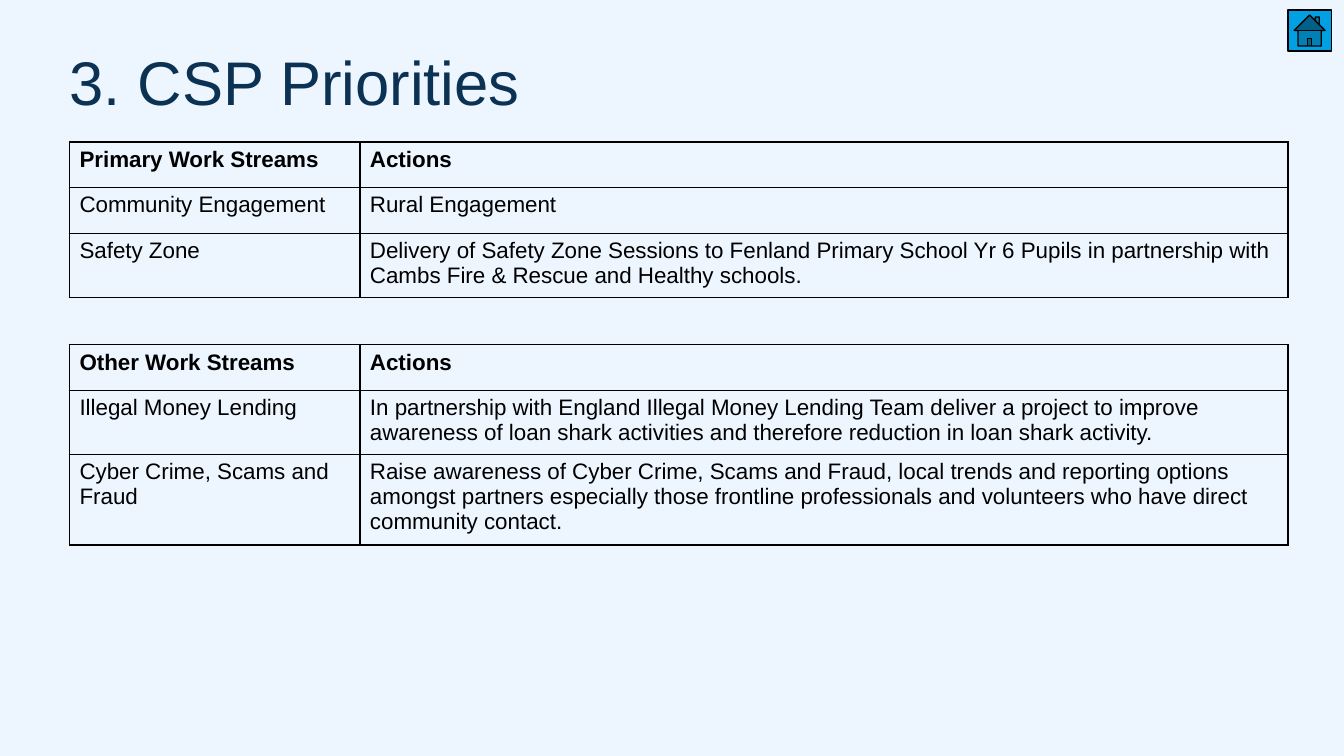
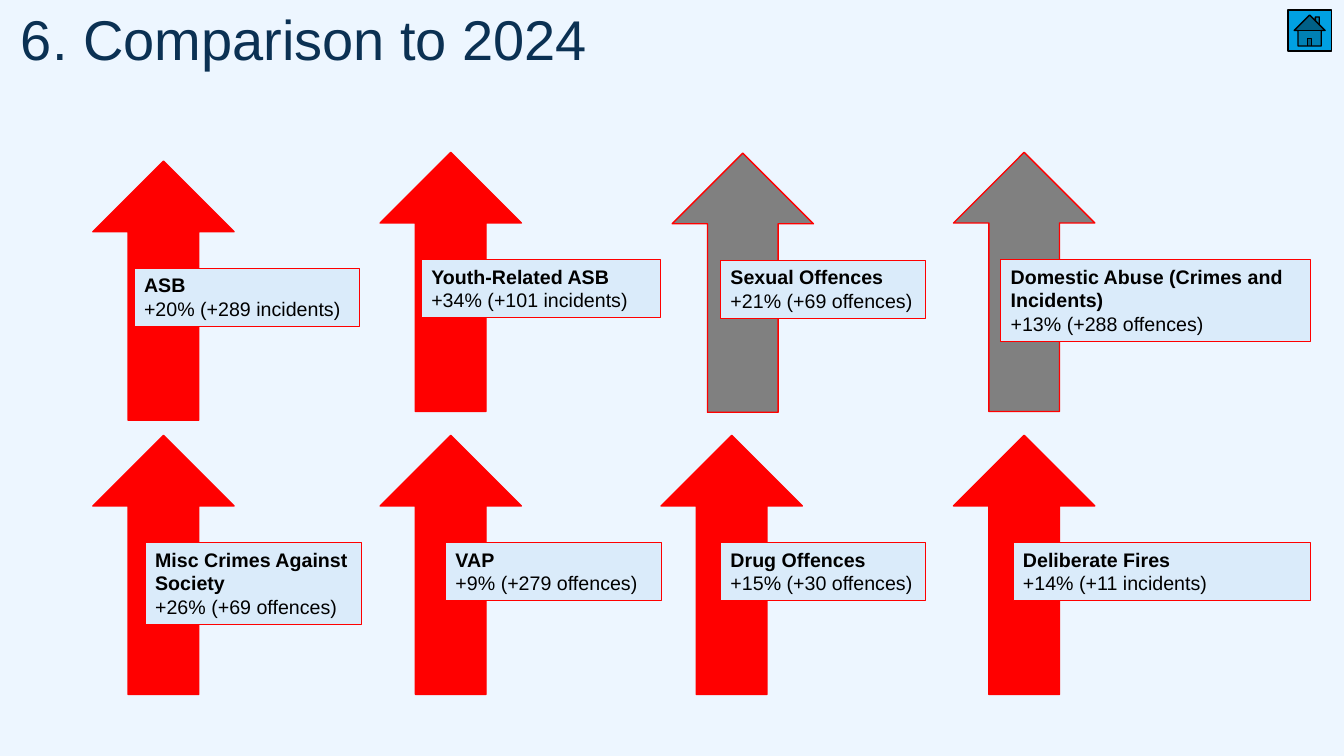
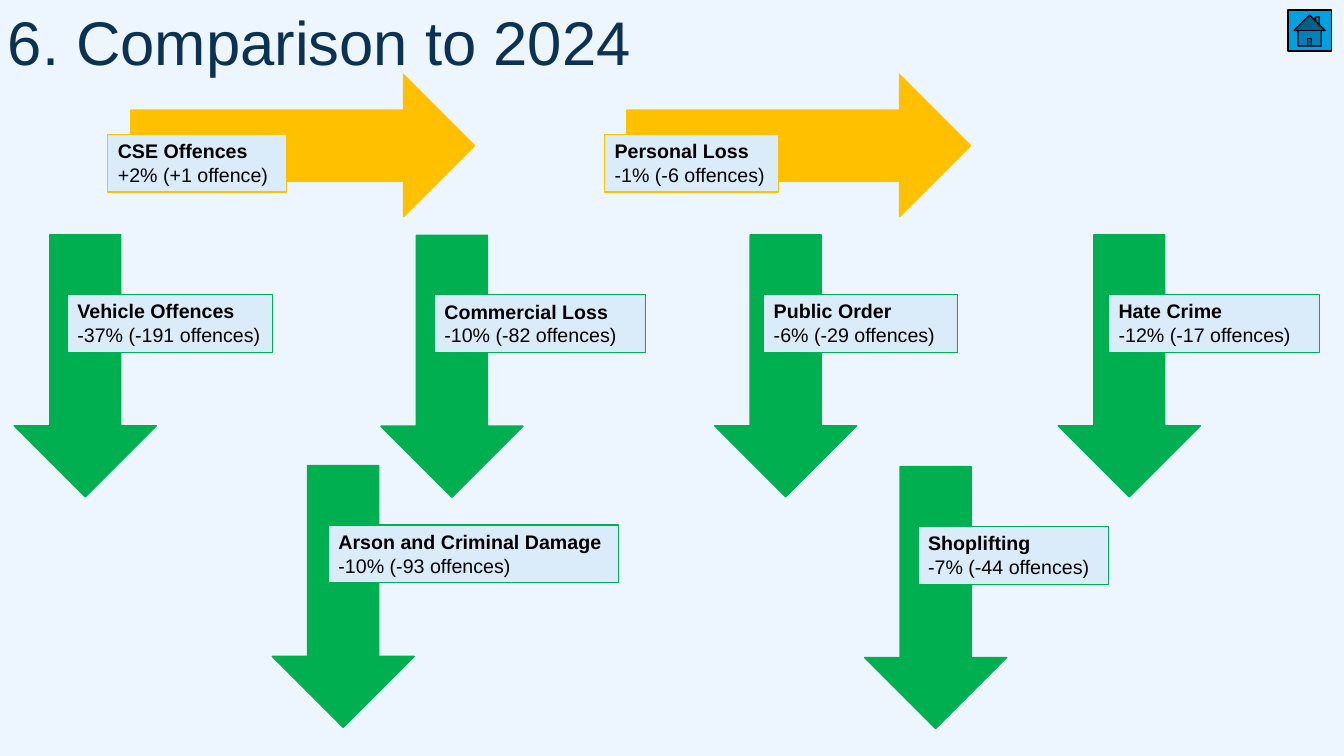
from dataclasses import dataclass

from lxml.etree import SubElement
from pptx import Presentation
from pptx.dml.color import RGBColor
from pptx.enum.shapes import MSO_SHAPE
from pptx.enum.text import MSO_ANCHOR, MSO_AUTO_SIZE, PP_ALIGN
from pptx.oxml.ns import qn
from pptx.presentation import Presentation as Deck
from pptx.shapes.autoshape import Shape
from pptx.slide import Slide
from pptx.table import _Cell
from pptx.text.text import _Paragraph
from pptx.util import Cm, Pt

# Shared style
FONT = "Arial"
BACKGROUND = "EDF6FF"
TITLE_COLOUR = "0B3153"
LABEL_FILL = "DAEBFA"
HOME_FILL = "00A0E2"
BLACK = "000000"
RED = "FF0000"
GREY = "808080"
GREEN = "00B050"
AMBER = "FFC000"

TABLE_LEFT = 1.75
COLUMN_WIDTHS = (7.32, 23.39)
ROW_HEIGHT = 1.15


@dataclass(frozen=True)
class ArrowStyle:
    preset: MSO_SHAPE
    width: float
    height: float
    label_drop: float  # from the top of the arrow to the top of its label
    fill: str
    line: str


@dataclass(frozen=True)
class Trend:
    """An arrow with a label box over its shaft; lengths in centimetres."""
    style: ArrowStyle
    left: float
    top: float
    label_left: float
    label_width: float
    name: str
    change: str
    label_height: float = 1.46


UP = ArrowStyle(MSO_SHAPE.UP_ARROW, 3.56, 6.53, 2.7, RED, RED)
UP_GREY = ArrowStyle(MSO_SHAPE.UP_ARROW, 3.56, 6.53, 2.7, GREY, RED)
DOWN = ArrowStyle(MSO_SHAPE.DOWN_ARROW, 3.58, 6.6, 1.5, GREEN, GREEN)
LEVEL = ArrowStyle(MSO_SHAPE.RIGHT_ARROW, 8.66, 3.58, 1.5, AMBER, AMBER)

PRIMARY_STREAMS = [
    ("Primary Work Streams", "Actions"),
    ("Community Engagement", "Rural Engagement"),
    ("Safety Zone",
     "Delivery of Safety Zone Sessions to Fenland Primary School Yr 6 Pupils "
     "in partnership with Cambs Fire & Rescue and Healthy schools."),
]
OTHER_STREAMS = [
    ("Other Work Streams", "Actions"),
    ("Illegal Money Lending",
     "In partnership with England Illegal Money Lending Team deliver a project "
     "to improve awareness of loan shark activities and therefore reduction in "
     "loan shark activity."),
    ("Cyber Crime, Scams and Fraud",
     "Raise awareness of Cyber Crime, Scams and Fraud, local trends and "
     "reporting options amongst partners especially those frontline "
     "professionals and volunteers who have direct community contact."),
]
INCREASES = [
    Trend(UP, 2.34, 4.06, 3.38, 5.69, "ASB", "+20% (+289 incidents)"),
    Trend(UP, 9.58, 3.84, 10.62, 6.02, "Youth-Related ASB", "+34% (+101 incidents)"),
    Trend(UP_GREY, 16.94, 3.86, 18.16, 5.16, "Sexual Offences", "+21% (+69 offences)"),
    Trend(UP_GREY, 24.03, 3.84, 25.22, 7.8, "Domestic Abuse (Crimes and Incidents)",
          "+13% (+288 offences)", 2.06),
    Trend(UP, 2.34, 10.97, 3.66, 5.44, "Misc Crimes Against Society",
          "+26% (+69 offences)", 2.06),
    Trend(UP, 9.58, 10.97, 11.23, 5.44, "VAP", "+9% (+279 offences)"),
    Trend(UP, 16.66, 10.97, 18.16, 5.16, "Drug Offences", "+15% (+30 offences)"),
    Trend(UP, 24.03, 10.97, 25.53, 7.49, "Deliberate Fires", "+14% (+11 incidents)"),
]
STEADY_AND_DECREASES = [
    Trend(LEVEL, 3.3, 1.88, 2.72, 4.5, "CSE Offences", "+2% (+1 offence)"),
    Trend(LEVEL, 15.8, 1.88, 15.24, 4.39, "Personal Loss", "-1% (-6 offences)"),
    Trend(DOWN, 0.36, 5.92, 1.7, 5.16, "Vehicle Offences", "-37% (-191 offences)"),
    Trend(DOWN, 9.6, 5.93, 10.95, 5.33, "Commercial Loss", "-10% (-82 offences)"),
    Trend(DOWN, 18.01, 5.92, 19.25, 4.88, "Public Order", "-6% (-29 offences)"),
    Trend(DOWN, 26.67, 5.92, 27.94, 5.31, "Hate Crime", "-12% (-17 offences)"),
    Trend(DOWN, 6.86, 11.73, 8.28, 7.32, "Arson and Criminal Damage",
          "-10% (-93 offences)"),
    Trend(DOWN, 21.79, 11.76, 23.14, 4.8, "Shoplifting", "-7% (-44 offences)"),
]


def colour(value: str) -> RGBColor:
    return RGBColor.from_string(value)


def set_font(paragraph: _Paragraph, size: float, value: str, bold: bool = False) -> None:
    paragraph.font.name = FONT
    paragraph.font.size = Pt(size)
    paragraph.font.bold = bold
    paragraph.font.color.rgb = colour(value)


def add_box(slide: Slide, preset: MSO_SHAPE, left: float, top: float, width: float,
            height: float, fill: str, line: str, line_width: float = 1) -> Shape:
    shape = slide.shapes.add_shape(preset, Cm(left), Cm(top), Cm(width), Cm(height))
    shape.shadow.inherit = False
    shape.fill.solid()
    shape.fill.fore_color.rgb = colour(fill)
    shape.line.color.rgb = colour(line)
    shape.line.width = Pt(line_width)
    return shape


def add_title(slide: Slide, text: str, left: float, top: float, width: float,
              height: float, size: float) -> None:
    frame = slide.shapes.add_textbox(Cm(left), Cm(top), Cm(width), Cm(height)).text_frame
    frame.word_wrap = True
    frame.margin_left = frame.margin_top = frame.margin_right = frame.margin_bottom = 0
    paragraph = frame.paragraphs[0]
    paragraph.text = text
    paragraph.line_spacing = 0.9
    set_font(paragraph, size, TITLE_COLOUR)


def start_slide(presentation: Deck) -> Slide:
    """Add a blank slide with the shared background and home button."""
    slide = presentation.slides.add_slide(presentation.slide_layouts[6])
    slide.background.fill.solid()
    slide.background.fill.fore_color.rgb = colour(BACKGROUND)
    add_box(slide, MSO_SHAPE.ACTION_BUTTON_HOME, 32.46, 0.25, 1.09, 1.04,
            HOME_FILL, BLACK)
    return slide


def add_borders(cell: _Cell) -> None:
    properties = cell._tc.get_or_add_tcPr()
    for side in ("a:lnL", "a:lnR", "a:lnT", "a:lnB"):
        border = SubElement(properties, qn(side), w=str(Pt(1)))
        fill = SubElement(border, qn("a:solidFill"))
        SubElement(fill, qn("a:srgbClr"), val=BLACK)


def add_stream_table(slide: Slide, top: float, rows: list[tuple[str, str]]) -> None:
    table = slide.shapes.add_table(
        len(rows), len(COLUMN_WIDTHS), Cm(TABLE_LEFT), Cm(top),
        Cm(sum(COLUMN_WIDTHS)), Cm(ROW_HEIGHT * len(rows))).table
    table.first_row = table.horz_banding = False
    for column, width in zip(table.columns, COLUMN_WIDTHS):
        column.width = Cm(width)
    for row_index, texts in enumerate(rows):
        table.rows[row_index].height = Cm(ROW_HEIGHT)
        for column_index, text in enumerate(texts):
            cell = table.cell(row_index, column_index)
            cell.text = text
            set_font(cell.text_frame.paragraphs[0], 16, BLACK, bold=row_index == 0)
            add_borders(cell)
            cell.fill.background()


def add_trend(slide: Slide, trend: Trend) -> None:
    style = trend.style
    add_box(slide, style.preset, trend.left, trend.top, style.width, style.height,
            style.fill, style.line)
    label = add_box(slide, MSO_SHAPE.RECTANGLE, trend.label_left,
                    trend.top + style.label_drop, trend.label_width,
                    trend.label_height, LABEL_FILL, style.line, 0.75)
    frame = label.text_frame
    frame.word_wrap = True
    frame.auto_size = MSO_AUTO_SIZE.SHAPE_TO_FIT_TEXT
    frame.vertical_anchor = MSO_ANCHOR.TOP
    frame.text = f"{trend.name}\n{trend.change}"
    for paragraph, bold in zip(frame.paragraphs, (True, False)):
        paragraph.alignment = PP_ALIGN.LEFT
        set_font(paragraph, 14, BLACK, bold)


def main() -> None:
    presentation = Presentation()
    presentation.slide_width = Cm(33.87)
    presentation.slide_height = Cm(19.05)

    # Priorities
    slide = start_slide(presentation)
    add_title(slide, "3. CSP Priorities", 1.75, 1.32, 29.21, 3.38, 44)
    add_stream_table(slide, 3.58, PRIMARY_STREAMS)
    add_stream_table(slide, 8.69, OTHER_STREAMS)

    # Increases
    slide = start_slide(presentation)
    add_title(slide, "6. Comparison to 2024", 0.53, 0.3, 28.02, 2.13, 40)
    for trend in INCREASES:
        add_trend(slide, trend)

    # Little change and decreases
    slide = start_slide(presentation)
    add_title(slide, "6. Comparison to 2024", 0.2, 0.3, 28.14, 3.07, 44)
    for trend in STEADY_AND_DECREASES:
        add_trend(slide, trend)

    presentation.save("out.pptx")


if __name__ == "__main__":
    main()
